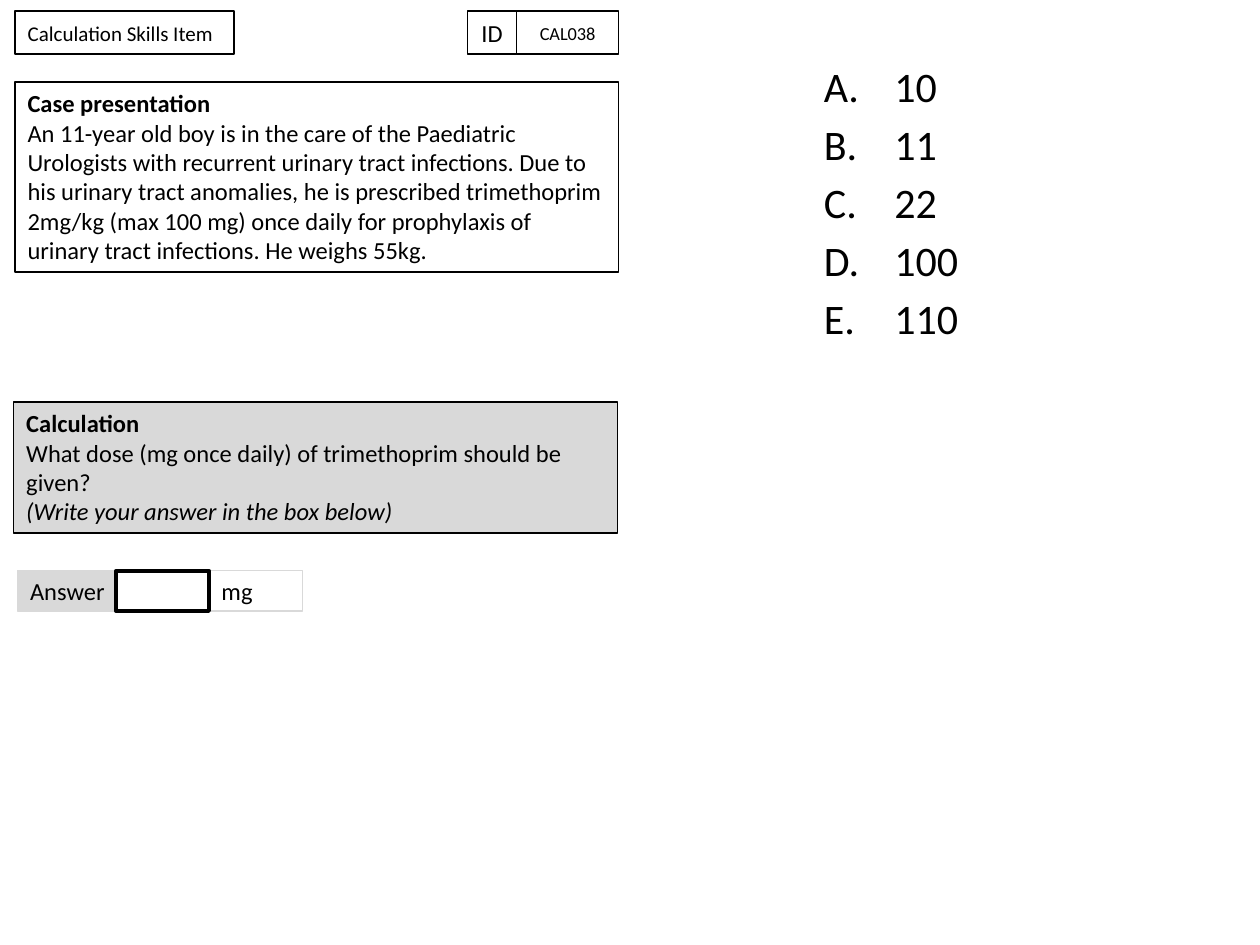
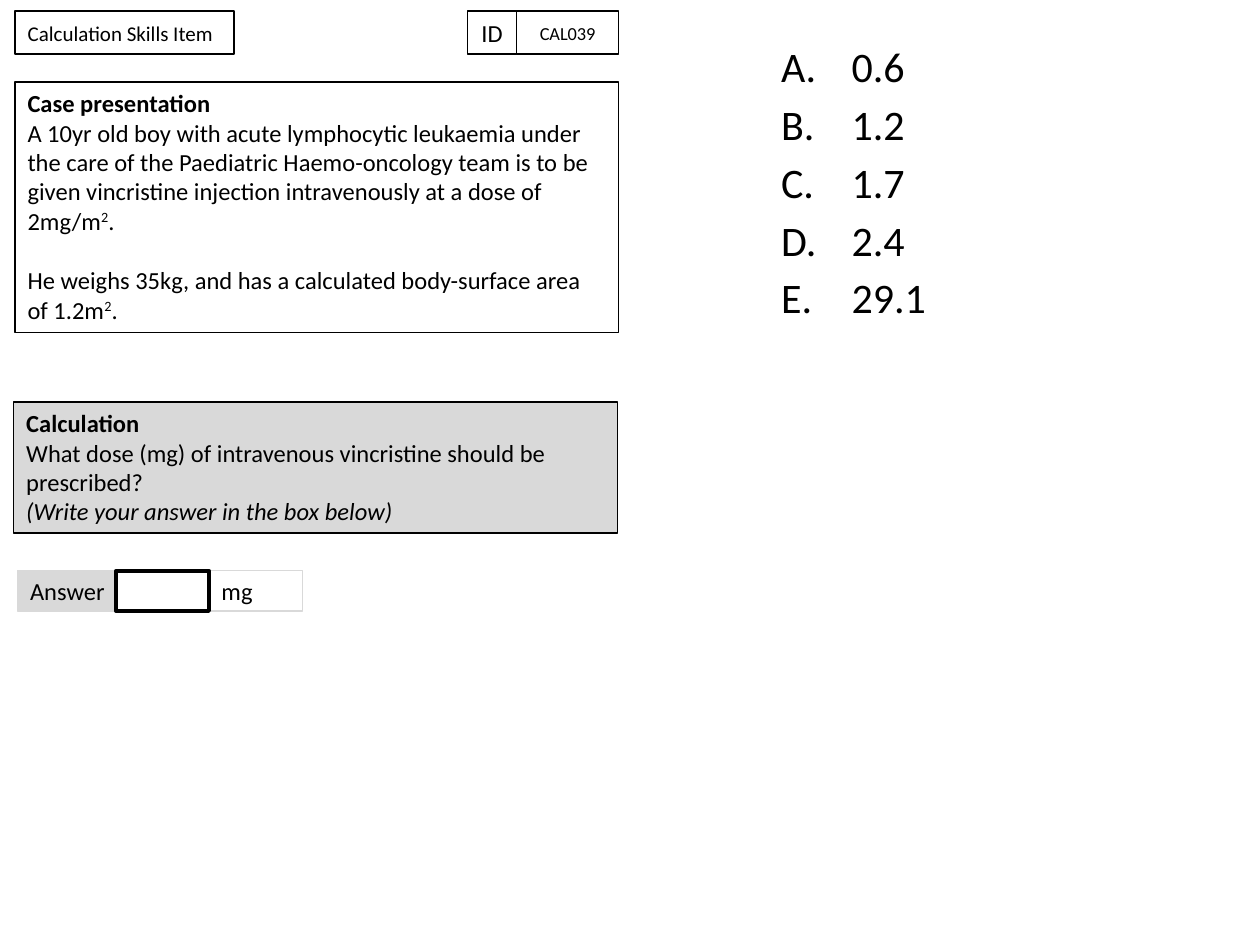
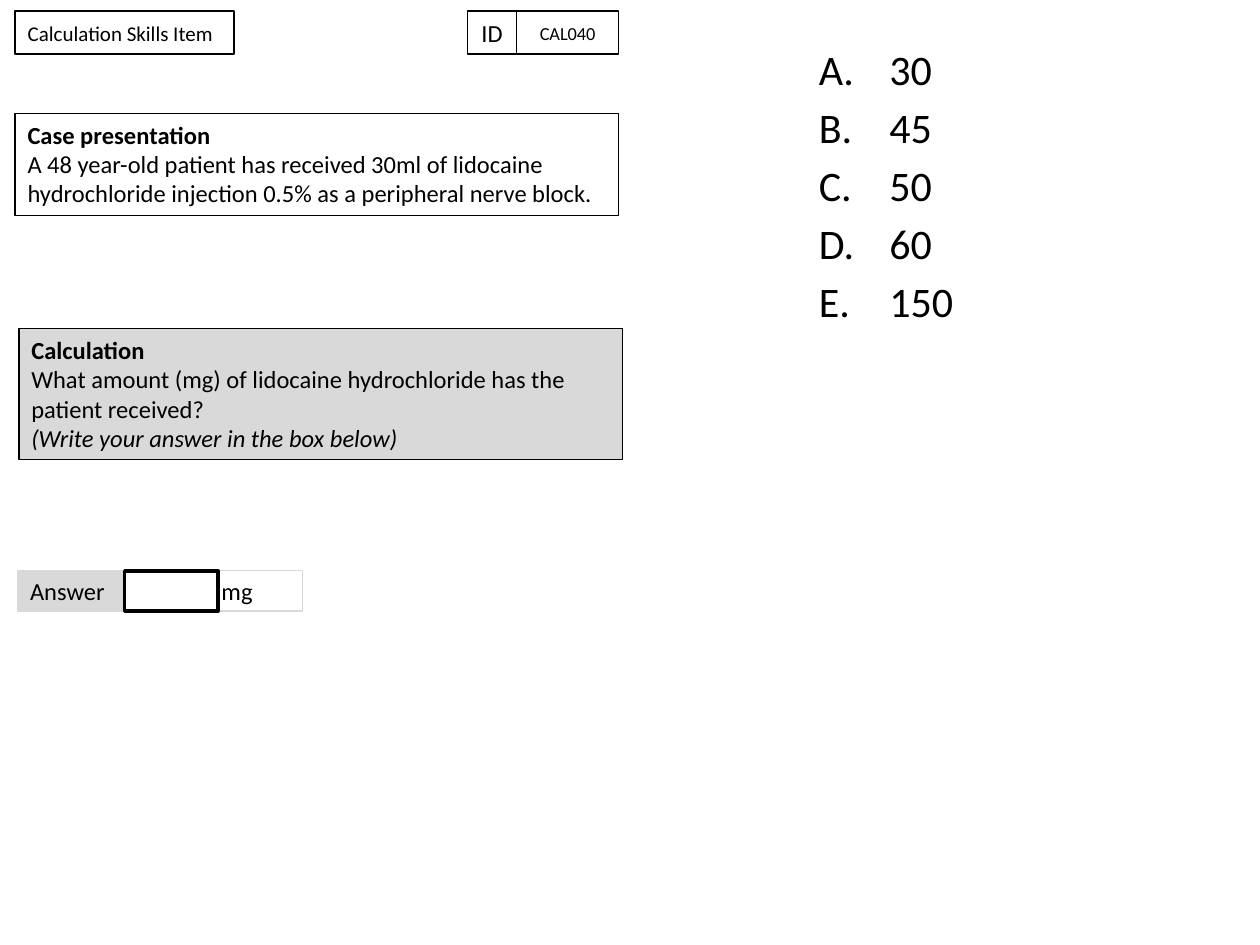
from dataclasses import dataclass

from lxml.etree import SubElement
from pptx import Presentation
from pptx.dml.color import RGBColor
from pptx.enum.shapes import MSO_SHAPE
from pptx.enum.text import MSO_ANCHOR, MSO_AUTO_SIZE, PP_ALIGN
from pptx.oxml.ns import qn
from pptx.util import Inches, Pt

BLACK, WHITE, GREY = "000000", "FFFFFF", "D9D9D9"
FONT = "Calibri"
BODY_SIZE = 14
BLANK_LINE = 17.1
PANEL_WIDTH = 4.79
HEADER_BOX = (0.12, 0.09, PANEL_WIDTH, 0.34)
ANSWER_BOX = (0.14, 4.53, 2.26, 0.32)


@dataclass
class Item:
    """One calculation question with its answer options."""
    code: str
    case: list
    question: str
    options: list
    options_box: tuple
    case_box: tuple
    question_box: tuple = (0.11, 3.19, PANEL_WIDTH, 1.04)
    blank_offset: float = 0.78


ITEMS = [
    Item("CAL038",
         ["An 11-year old boy is in the care of the Paediatric Urologists with recurrent "
          "urinary tract infections. Due to his urinary tract anomalies, he is prescribed "
          "trimethoprim 2mg/kg (max 100 mg) once daily for prophylaxis of urinary tract "
          "infections. He weighs 55kg."],
         "What dose (mg once daily) of trimethoprim should be given?",
         ["10", "11", "22", "100", "110"],
         (6.44, 0.43, 3.31, 6.4), (0.12, 0.65, PANEL_WIDTH, 1.51)),
    Item("CAL039",
         ["A 10yr old boy with acute lymphocytic leukaemia under the care of the Paediatric "
          "Haemo-oncology team is to be given vincristine injection intravenously at a dose "
          "of 2mg/m^2^.",
          "He weighs 35kg, and has a calculated body-surface area of 1.2m^2^."],
         "What dose (mg) of intravenous vincristine should be prescribed?",
         ["0.6", "1.2", "1.7", "2.4", "29.1"],
         (6.1, 0.27, 3.31, 6.4), (0.12, 0.65, PANEL_WIDTH, 1.99)),
    Item("CAL040",
         ["A 48 year-old patient has received 30ml of lidocaine hydrochloride injection 0.5% "
          "as a peripheral nerve block."],
         "What amount (mg) of lidocaine hydrochloride has the patient received?",
         ["30", "45", "50", "60", "150"],
         (6.4, 0.3, 3.31, 6.4), (0.12, 0.9, PANEL_WIDTH, 0.81),
         (0.15, 2.61, PANEL_WIDTH, 1.04), 0.85),
]


def color(hex_code):
    """Turn a hex string into a colour."""
    return RGBColor.from_string(hex_code)


def inches(box):
    """Convert a left, top, width, height box to lengths."""
    return [Inches(value) for value in box]


def set_font(paragraph, size=BODY_SIZE, bold=False, italic=False):
    """Give a paragraph the shared font."""
    font = paragraph.font
    font.name, font.size, font.bold, font.italic = FONT, Pt(size), bold, italic
    font.color.rgb = color(BLACK)


def style_box(shape, fill, line, weight):
    """Apply fill and outline, and let the text wrap."""
    if fill:
        shape.fill.solid()
        shape.fill.fore_color.rgb = color(fill)
    else:
        shape.fill.background()
    shape.line.color.rgb = color(line)
    shape.line.width = Pt(weight)
    shape.text_frame.word_wrap = True


def add_box(slide, box, fill=None, line=BLACK, weight=0.75):
    """Add an outlined rectangle without a shadow."""
    shape = slide.shapes.add_shape(MSO_SHAPE.RECTANGLE, *inches(box))
    shape.shadow.inherit = False
    style_box(shape, fill, line, weight)
    return shape


def write_label(shape, text, size=BODY_SIZE, align=PP_ALIGN.LEFT):
    """Write one vertically centred line in a shape."""
    frame = shape.text_frame
    frame.text = text
    frame.vertical_anchor = MSO_ANCHOR.MIDDLE
    frame.paragraphs[0].alignment = align
    set_font(frame.paragraphs[0], size)


def add_runs(paragraph, text):
    """Write text in which carets enclose superscripts."""
    for index, part in enumerate(text.split("^")):
        run = paragraph.add_run()
        run.text = part
        if index % 2:
            run._r.get_or_add_rPr().set("baseline", "30000")


def add_panel(slide, box, heading, body, hint=None, fill=None):
    """Add a text panel with a bold heading and an optional italic hint."""
    frame = add_box(slide, box, fill).text_frame
    frame.auto_size = MSO_AUTO_SIZE.SHAPE_TO_FIT_TEXT
    frame.vertical_anchor = MSO_ANCHOR.TOP
    lines = [heading, *body] + ([hint] if hint else [])
    for index, text in enumerate(lines):
        paragraph = frame.paragraphs[0] if index == 0 else frame.add_paragraph()
        paragraph.alignment = PP_ALIGN.LEFT
        if 1 < index <= len(body):
            paragraph.space_before = Pt(BLANK_LINE)
        add_runs(paragraph, text)
        set_font(paragraph, bold=index == 0, italic=index > len(body))


def add_header(slide, box, code):
    """Place the title at the left and the item code at the right."""
    left, top, width, height = box
    code_width, id_width = 0.81, 0.39
    code_left = left + width - code_width
    title = slide.shapes.title
    title.left, title.top, title.width, title.height = inches((left, top, 1.74, height))
    style_box(title, WHITE, BLACK, 1)
    write_label(title, "Calculation Skills Item", 12)
    code_cell = add_box(slide, (code_left, top, code_width, height), WHITE, weight=1)
    write_label(code_cell, code, 10.5, PP_ALIGN.CENTER)
    id_cell = add_box(slide, (code_left - id_width, top, id_width, height), weight=1)
    write_label(id_cell, "ID", align=PP_ALIGN.CENTER)


def add_answer(slide, box, blank_offset):
    """Add the answer label, its unit and the blank to fill in."""
    left, top, width, height = box
    blank_width = 0.74
    answer = add_box(slide, (left, top, 0.87, height), GREY, GREY)
    write_label(answer, "Answer")
    unit = add_box(slide, (left + width - blank_width, top, blank_width, height), line=GREY)
    write_label(unit, "mg")
    add_box(slide, (left + blank_offset, top, blank_width, height), WHITE, weight=2)


def add_options(slide, box, options):
    """List the options with automatic capital letters."""
    frame = slide.shapes.add_textbox(*inches(box)).text_frame
    frame.word_wrap = True
    for index, option in enumerate(options):
        paragraph = frame.paragraphs[0] if index == 0 else frame.add_paragraph()
        paragraph.text = option
        properties = paragraph._p.get_or_add_pPr()
        properties.set("marL", str(Inches(0.56)))
        properties.set("indent", str(Inches(-0.56)))
        SubElement(properties, qn("a:buFont"), typeface="+mj-lt")
        SubElement(properties, qn("a:buAutoNum"), type="alphaUcPeriod")
        if index:
            paragraph.space_before = Pt(4.3)
        set_font(paragraph, 24)


def add_item_slide(deck, item):
    """Build the slide of one item."""
    slide = deck.slides.add_slide(deck.slide_layouts.get_by_name("Title Only"))
    add_options(slide, item.options_box, item.options)
    add_header(slide, HEADER_BOX, item.code)
    add_panel(slide, item.case_box, "Case presentation", item.case)
    add_panel(slide, item.question_box, "Calculation", [item.question],
              "(Write your answer in the box below)", GREY)
    add_answer(slide, ANSWER_BOX, item.blank_offset)


def main():
    """Build and save the deck."""
    deck = Presentation()
    deck.slide_width, deck.slide_height = Inches(10), Inches(7.5)
    for item in ITEMS:
        add_item_slide(deck, item)
    deck.save("out.pptx")


if __name__ == "__main__":
    main()
